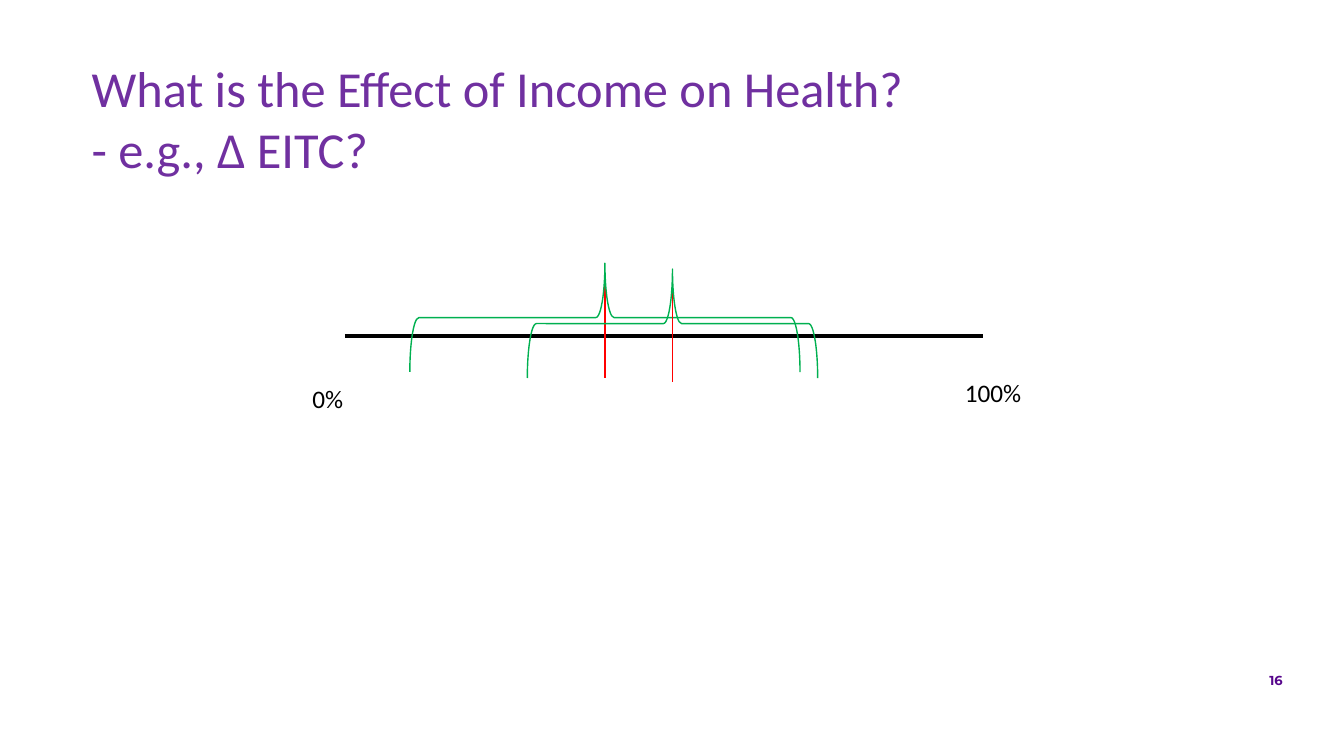
from lxml import etree
from pptx import Presentation
from pptx.dml.color import RGBColor
from pptx.enum.shapes import MSO_CONNECTOR, MSO_SHAPE
from pptx.enum.text import PP_ALIGN
from pptx.oxml.ns import qn
from pptx.util import Inches, Pt

STRAIGHT = MSO_CONNECTOR.STRAIGHT
RIGHT_BRACE = MSO_SHAPE.RIGHT_BRACE
LEFT, RIGHT = PP_ALIGN.LEFT, PP_ALIGN.RIGHT

BLACK = RGBColor(0x00, 0x00, 0x00)
RED = RGBColor(0xFF, 0x00, 0x00)
GREEN = RGBColor(0x00, 0xB0, 0x50)
PURPLE = RGBColor(0x70, 0x30, 0xA0)
DEEP_VIOLET = RGBColor(0x57, 0x06, 0x8C)

TITLE = ["What is the Effect of Income on Health?", "- e.g., ∆ EITC?"]
TITLE_FORMAT = {"name": "Calibri", "size": Pt(36)}
LABEL_FORMAT = {"name": "Calibri", "size": Pt(18)}
NUMBER_FORMAT = {"name": "Montserrat", "size": Pt(9.3), "bold": True}

# lines, (left, top, width, height), font format, colour, alignment
TEXTS = [
    (TITLE, (0.81, 0.52, 11.71, 1.31), TITLE_FORMAT, PURPLE, LEFT),
    (["0%"], (3, 3.75, 0.67, 0.4), LABEL_FORMAT, BLACK, LEFT),
    (["100%"], (9.47, 3.69, 1.19, 0.4), LABEL_FORMAT, BLACK, LEFT),
    (["16"], (6.74, 6.59, 6.11, 0.45), NUMBER_FORMAT, DEEP_VIOLET, RIGHT),
]
NUMBER_INSET = 0.13

SCALE_START, SCALE_END, SCALE_Y = 3.42, 9.75, 3.33

# estimate x, top of its line, range width, middle height of its brace
ESTIMATES = [(6, 2.75, 3.87, 3.15), (6.67, 2.79, 2.88, 3.21)]
ESTIMATE_LENGTH = 1
BRACE_DEPTH = 1.08


def add_text(page, lines, place, font_format, color, alignment):
    box = page.shapes.add_textbox(*map(Inches, place))
    frame = box.text_frame
    frame.word_wrap = True
    for index, line in enumerate(lines):
        para = frame.paragraphs[0] if index == 0 else frame.add_paragraph()
        para.alignment = alignment
        span = para.add_run()
        span.text = line
        for name, value in font_format.items():
            setattr(span.font, name, value)
        span.font.color.rgb = color
    return frame


def add_line(page, start, end, color, width):
    line = page.shapes.add_connector(STRAIGHT, *map(Inches, start + end))
    line.line.color.rgb = color
    line.line.width = Pt(width)
    etree.SubElement(line._element.spPr, qn("a:effectLst"))


def add_range_brace(page, center_x, center_y, span_width):
    """Draw a brace that points up and covers span_width."""
    brace = page.shapes.add_shape(
        RIGHT_BRACE,
        Inches(center_x - BRACE_DEPTH / 2), Inches(center_y - span_width / 2),
        Inches(BRACE_DEPTH), Inches(span_width))
    brace.rotation = 270
    brace.shadow.inherit = False
    brace.fill.background()
    brace.line.color.rgb = GREEN
    brace.line.width = Pt(1)


def main():
    deck = Presentation()
    deck.slide_width, deck.slide_height = Inches(13.33), Inches(7.5)
    page = deck.slides.add_slide(deck.slide_layouts[6])

    frames = [add_text(page, *text) for text in TEXTS]
    for side in ("left", "top", "right", "bottom"):
        setattr(frames[-1], f"margin_{side}", Inches(NUMBER_INSET))

    add_line(page, (SCALE_START, SCALE_Y), (SCALE_END, SCALE_Y), BLACK, 3)
    for x, top, range_width, brace_y in ESTIMATES:
        add_line(page, (x, top), (x, top + ESTIMATE_LENGTH), RED, 1)
        add_range_brace(page, x, brace_y, range_width)

    deck.save("out.pptx")


if __name__ == "__main__":
    main()
